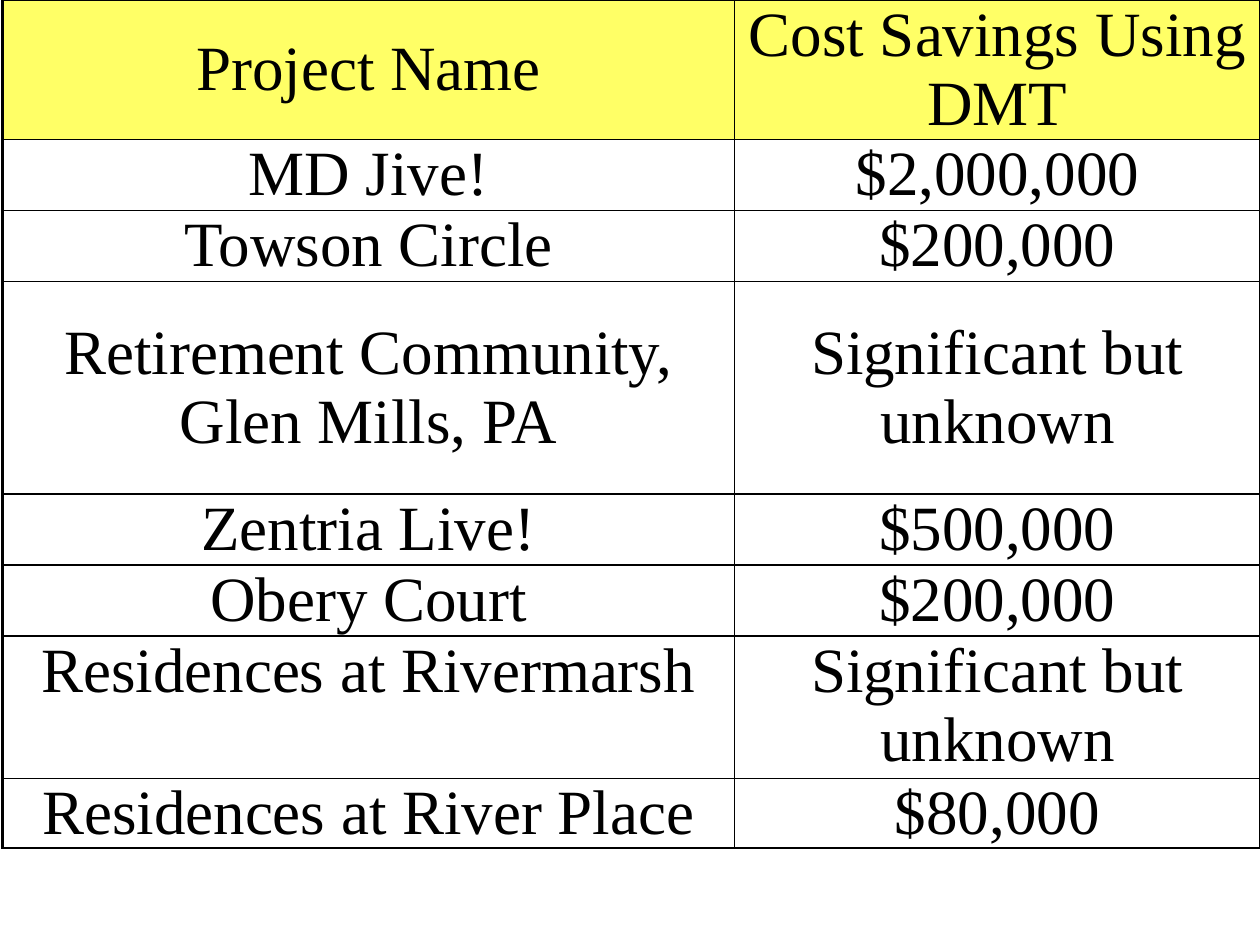
from typing import NamedTuple

from lxml import etree
from pptx import Presentation
from pptx import util as u
from pptx.dml.color import RGBColor
from pptx.enum import text
from pptx.oxml.ns import qn

COLORS = {"ink": "000000", "header": "FFFF66"}
FONT = "Times New Roman"
COL_WIDTHS = (14.76, 10.59)
OUTER, INNER = 1.5, 1
TOP, MIDDLE = text.MSO_ANCHOR.TOP, text.MSO_ANCHOR.MIDDLE


class Row(NamedTuple):
    project: str
    savings: str
    height: float = 1.43
    anchors: tuple = (TOP, TOP)


ROWS = [
    Row("Project Name", "Cost Savings Using DMT", 2.29, (MIDDLE, TOP)),
    Row("MD Jive!", "$2,000,000"),
    Row("Towson Circle", "$200,000"),
    Row("Retirement Community, Glen Mills, PA", "Significant but unknown",
        4.29, (MIDDLE, MIDDLE)),
    Row("Zentria Live!", "$500,000"),
    Row("Obery Court", "$200,000"),
    Row("Residences at Rivermarsh", "Significant but unknown", 2.87),
    Row("Residences at River Place", "$80,000", 0.58),
]


def set_borders(cell, widths: dict) -> None:
    tc_pr = cell._tc.get_or_add_tcPr()
    for i, (side, width) in enumerate(widths.items()):
        ln = etree.Element(qn(f"a:ln{side}"), w=str(u.Pt(width)))
        fill = etree.SubElement(ln, qn("a:solidFill"))
        etree.SubElement(fill, qn("a:srgbClr"), val=COLORS["ink"])
        tc_pr.insert(i, ln)


def write_cell(cell, content: str, anchor) -> None:
    cell.margin_left = cell.margin_right = u.Cm(0.18)
    cell.margin_top = cell.margin_bottom = 0
    cell.vertical_anchor = anchor
    p = cell.text_frame.paragraphs[0]
    p.text = content
    p.alignment = text.PP_ALIGN.CENTER
    p.space_before, p.space_after = u.Pt(12), u.Pt(6)
    font = p.runs[0].font
    font.name, font.size, font.bold = FONT, u.Pt(36), False
    font.color.rgb = RGBColor.from_string(COLORS["ink"])


def add_savings_table(s) -> None:
    frame = s.shapes.add_table(len(ROWS), len(COL_WIDTHS), u.Cm(0.05), 0,
                               u.Cm(sum(COL_WIDTHS)), u.Cm(18))
    table = frame.table
    table.first_row = table.horz_banding = False
    for column, width in zip(table.columns, COL_WIDTHS):
        column.width = u.Cm(width)
    last_row, last_col = len(ROWS) - 1, len(COL_WIDTHS) - 1
    for i, row in enumerate(ROWS):
        table.rows[i].height = u.Cm(row.height)
        for j, content in enumerate((row.project, row.savings)):
            cell = table.cell(i, j)
            write_cell(cell, content, row.anchors[j])
            if i == 0:
                cell.fill.solid()
                cell.fill.fore_color.rgb = RGBColor.from_string(COLORS["header"])
            else:
                cell.fill.background()
            set_borders(cell, {
                "L": OUTER if j == 0 else INNER,
                "R": OUTER if j == last_col else INNER,
                "T": OUTER if i == 0 else INNER,
                "B": OUTER if i == last_row else INNER,
            })
    frame.height = u.Cm(18)


def main() -> None:
    prs = Presentation()
    prs.slide_width, prs.slide_height = u.Cm(25.4), u.Cm(19.05)
    s = prs.slides.add_slide(prs.slide_layouts[6])
    add_savings_table(s)
    prs.save("out.pptx")


if __name__ == "__main__":
    main()
